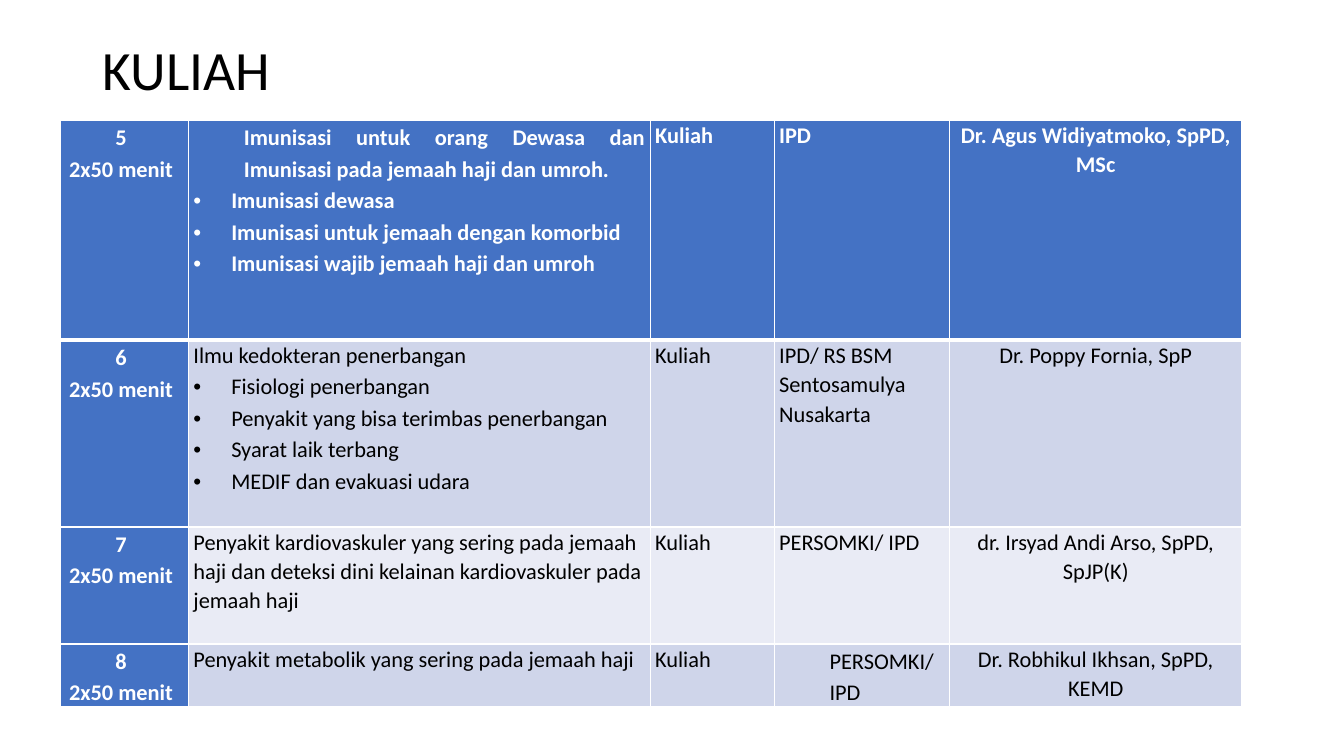
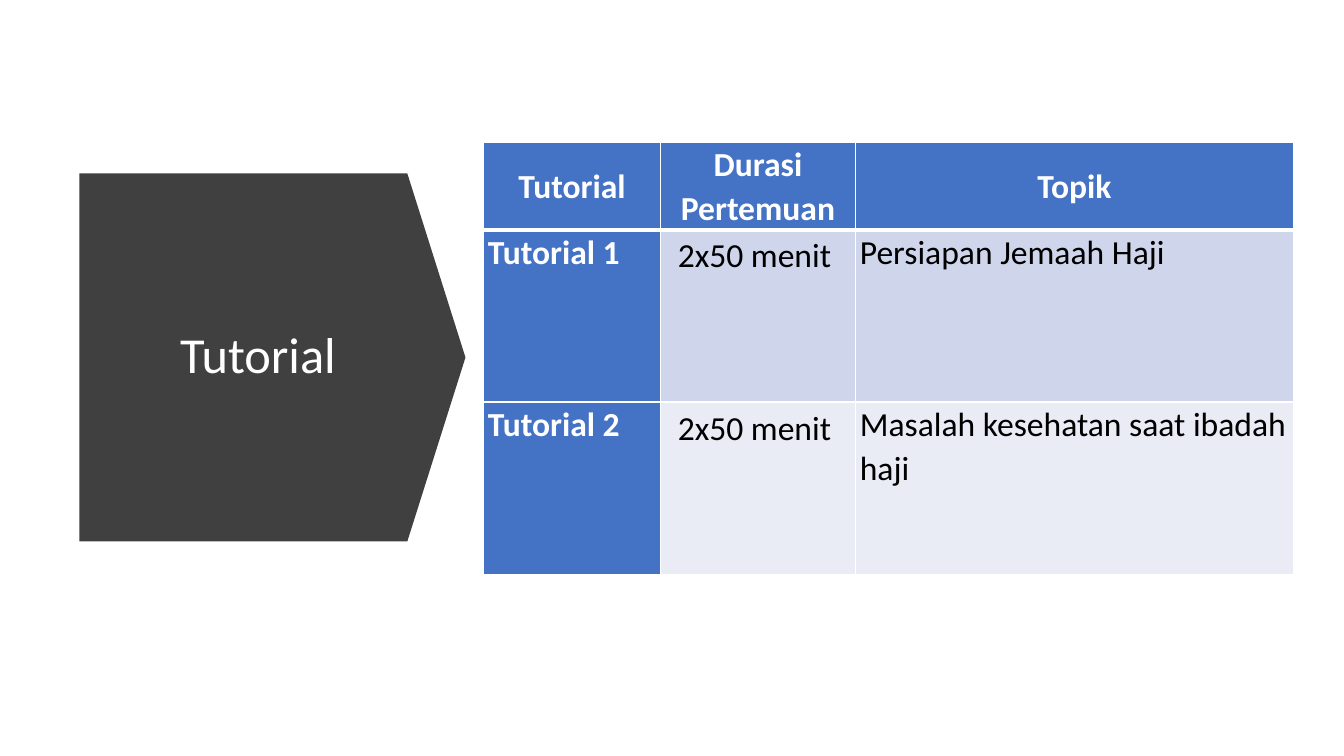
"""Build the two course-schedule slides: lectures and tutorials."""
from dataclasses import dataclass

from lxml import etree
from pptx import Presentation
from pptx import util as u
from pptx.dml.color import RGBColor
from pptx.enum import shapes, text
from pptx.oxml import ns

Pt = u.Pt
AL = text.PP_ALIGN
MIDDLE, TOP = text.MSO_ANCHOR.MIDDLE, text.MSO_ANCHOR.TOP


@dataclass(frozen=True)
class Theme:
    font: str = "Calibri"
    white: str = "FFFFFF"
    black: str = "000000"
    accent: str = "4472C4"
    bands: tuple = ("CFD5EA", "E9EBF5")
    dark: str = "404040"
    title_size: float = 39.6
    banner_size: float = 36
    lecture_size: float = 16
    tutorial_size: float = 24
    rule: float = 1
    header_rule: float = 3


T = Theme()

STYLES = {
    "plain": dict(spacing=1.07),
    "center": dict(spacing=1.07, align=AL.CENTER),
    "number": dict(spacing=1.15, align=AL.CENTER, left=14.4, first=-12.2, right=7.2),
    "duration": dict(spacing=1.15, align=AL.CENTER, left=7.9, first=-6.5, right=6.5),
    "indented": dict(spacing=1.15, left=36),
    "justified": dict(spacing=1.15, align=AL.JUSTIFY, left=36),
    "bullet": dict(spacing=1.15, left=27, first=-27, bullet="•"),
    "title": dict(spacing=0.9),
    "banner": dict(spacing=0.9, align=AL.CENTER),
}

LECTURES = [
    ("5", [("justified", "Imunisasi untuk orang Dewasa dan Imunisasi pada jemaah haji dan umroh."),
           ("bullet", "Imunisasi dewasa"),
           ("bullet", "Imunisasi untuk jemaah dengan komorbid"),
           ("bullet", "Imunisasi wajib jemaah haji dan umroh")],
     ("plain", "IPD"), "Dr. Agus Widiyatmoko, SpPD, MSc"),
    ("6", [("plain", "Ilmu kedokteran penerbangan"),
           ("bullet", "Fisiologi penerbangan"),
           ("bullet", "Penyakit yang bisa terimbas penerbangan"),
           ("bullet", "Syarat laik terbang"),
           ("bullet", "MEDIF dan evakuasi udara")],
     ("plain", "IPD/ RS BSM Sentosamulya Nusakarta"), "Dr. Poppy Fornia, SpP"),
    ("7", [("plain", "Penyakit kardiovaskuler yang sering pada jemaah haji dan "
                     "deteksi dini kelainan kardiovaskuler pada jemaah haji")],
     ("plain", "PERSOMKI/ IPD"), "dr. Irsyad Andi Arso, SpPD, SpJP(K)"),
    ("8", [("plain", "Penyakit metabolik yang sering pada jemaah haji")],
     ("indented", "PERSOMKI/ IPD"), "Dr. Robhikul Ikhsan, SpPD, KEMD"),
]

HEADINGS = ["Tutorial", "Durasi Pertemuan", "Topik"]
TOPICS = ["Persiapan Jemaah Haji", "Masalah kesehatan saat ibadah haji"]


def assign(target, **values):
    for name, value in values.items():
        setattr(target, name, value)


def place(sp, left, top, width, height):
    assign(sp, left=Pt(left), top=Pt(top), width=Pt(width), height=Pt(height))


def paint(fill, color):
    fill.solid()
    fill.fore_color.rgb = RGBColor.from_string(color)


def write(tf, paragraphs, size, color, bold=False):
    for i, (style, words) in enumerate(paragraphs):
        p = tf.add_paragraph() if i else tf.paragraphs[0]
        fmt = STYLES[style]
        assign(p, line_spacing=fmt["spacing"], alignment=fmt.get("align", AL.LEFT))
        pPr = p._p.get_or_add_pPr()
        for name, key in (("marL", "left"), ("marR", "right"), ("indent", "first")):
            pPr.set(name, str(Pt(fmt.get(key, 0))))
        if "bullet" in fmt:
            etree.SubElement(pPr, ns.qn("a:buFont"), typeface="Arial")
            etree.SubElement(pPr, ns.qn("a:buChar"), char=fmt["bullet"])
        r = p.add_run()
        r.text = words
        assign(r.font, name=T.font, size=Pt(size), bold=bold)
        r.font.color.rgb = RGBColor.from_string(color)


def add_title(s, words, box, style, size, color):
    sp = s.shapes.title
    place(sp, *box)
    tf = sp.text_frame
    assign(tf, word_wrap=True, auto_size=text.MSO_AUTO_SIZE.NONE, vertical_anchor=MIDDLE)
    write(tf, [(style, words)], size, color)


def add_borders(cell, row):
    widths = dict(L=T.rule, R=T.rule,
                  T=T.header_rule if row == 1 else T.rule,
                  B=T.header_rule if row == 0 else T.rule)
    tcPr = cell._tc.get_or_add_tcPr()
    for side, width in widths.items():
        ln = etree.SubElement(tcPr, ns.qn(f"a:ln{side}"), w=str(Pt(width)))
        fill = etree.SubElement(ln, ns.qn("a:solidFill"))
        etree.SubElement(fill, ns.qn("a:srgbClr"), val=T.white)


def add_table(s, left, top, widths, heights, rows, size, margin, header_anchor=TOP):
    frame = s.shapes.add_table(len(rows), len(widths), Pt(left), Pt(top),
                               Pt(sum(widths)), Pt(sum(heights)))
    table = frame.table
    table.first_col = True
    for column, width in zip(table.columns, widths):
        column.width = Pt(width)
    for i, (height, row) in enumerate(zip(heights, rows)):
        table.rows[i].height = Pt(height)
        for j, paragraphs in enumerate(row):
            cell = table.cell(i, j)
            heading = i == 0 or j == 0
            assign(cell, margin_left=Pt(margin), margin_right=Pt(margin),
                   margin_top=0, margin_bottom=0,
                   vertical_anchor=TOP if i else header_anchor)
            add_borders(cell, i)
            paint(cell.fill, T.accent if heading else T.bands[(i - 1) % 2])
            write(cell.text_frame, paragraphs, size,
                  T.white if heading else T.black, heading)


def add_banner(s, left, top, width, height):
    sp = s.shapes.add_shape(shapes.MSO_SHAPE.DOWN_ARROW,
                            Pt(left), Pt(top), Pt(width), Pt(height))
    sp.rotation = 270
    sp.adjustments[0], sp.adjustments[1] = 1, 0.158
    sp.shadow.inherit = False
    paint(sp.fill, T.dark)
    sp.line.fill.background()
    s.shapes.title._element.addprevious(sp._element)


def lecture_slide(s):
    add_title(s, "KULIAH", (66.2, 28.8, 828, 46), "title", T.title_size, T.black)
    rows = [[[("number", number), ("number", "2x50 menit")], subject,
             [("plain", "Kuliah")], [unit], [("center", lecturer)]]
            for number, subject, unit, lecturer in LECTURES]
    add_table(s, 43.2, 86, [91.4, 329.8, 88.6, 125.3, 208.8],
              [157, 133.5, 83.5, 45], rows, T.lecture_size, 3.6)


def tutorial_slide(s):
    add_banner(s, 63.2, 117.4, 262.8, 275.8)
    add_title(s, "Tutorial", (80.6, 154.8, 207.4, 200.9), "banner", T.banner_size, T.white)
    rows = [[[("center", heading)] for heading in HEADINGS]]
    rows += [[[("plain", f"Tutorial {n}")], [("duration", "2x50 menit")], [("plain", topic)]]
             for n, topic in enumerate(TOPICS, 1)]
    add_table(s, 345.6, 101.5, [126, 139.7, 312.5], [62.7, 123, 123.5],
              rows, T.tutorial_size, 2.9, MIDDLE)


def main():
    prs = Presentation()
    assign(prs, slide_width=Pt(960), slide_height=Pt(540))
    for build in (lecture_slide, tutorial_slide):
        build(prs.slides.add_slide(prs.slide_layouts[5]))
    prs.save("out.pptx")


if __name__ == "__main__":
    main()
